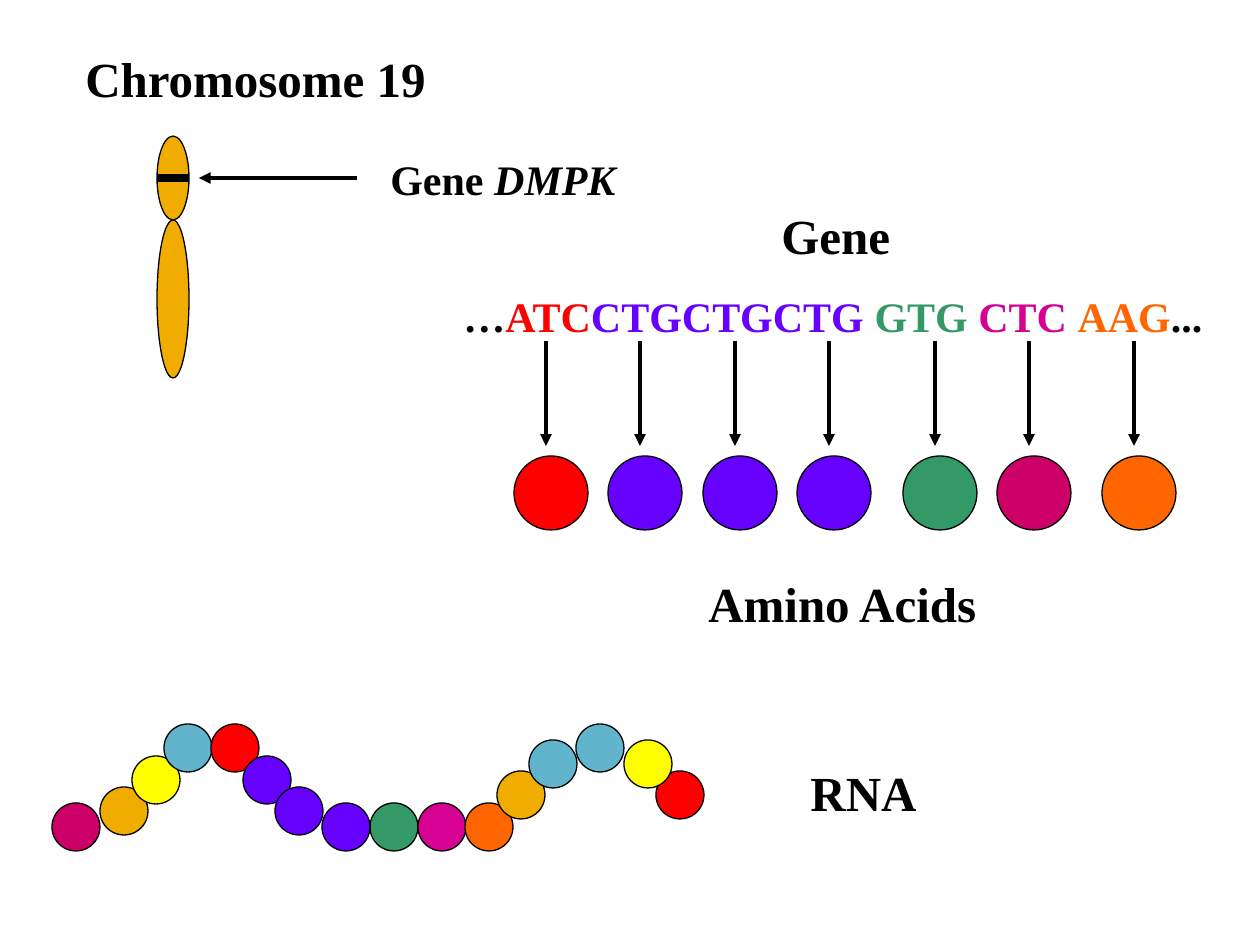
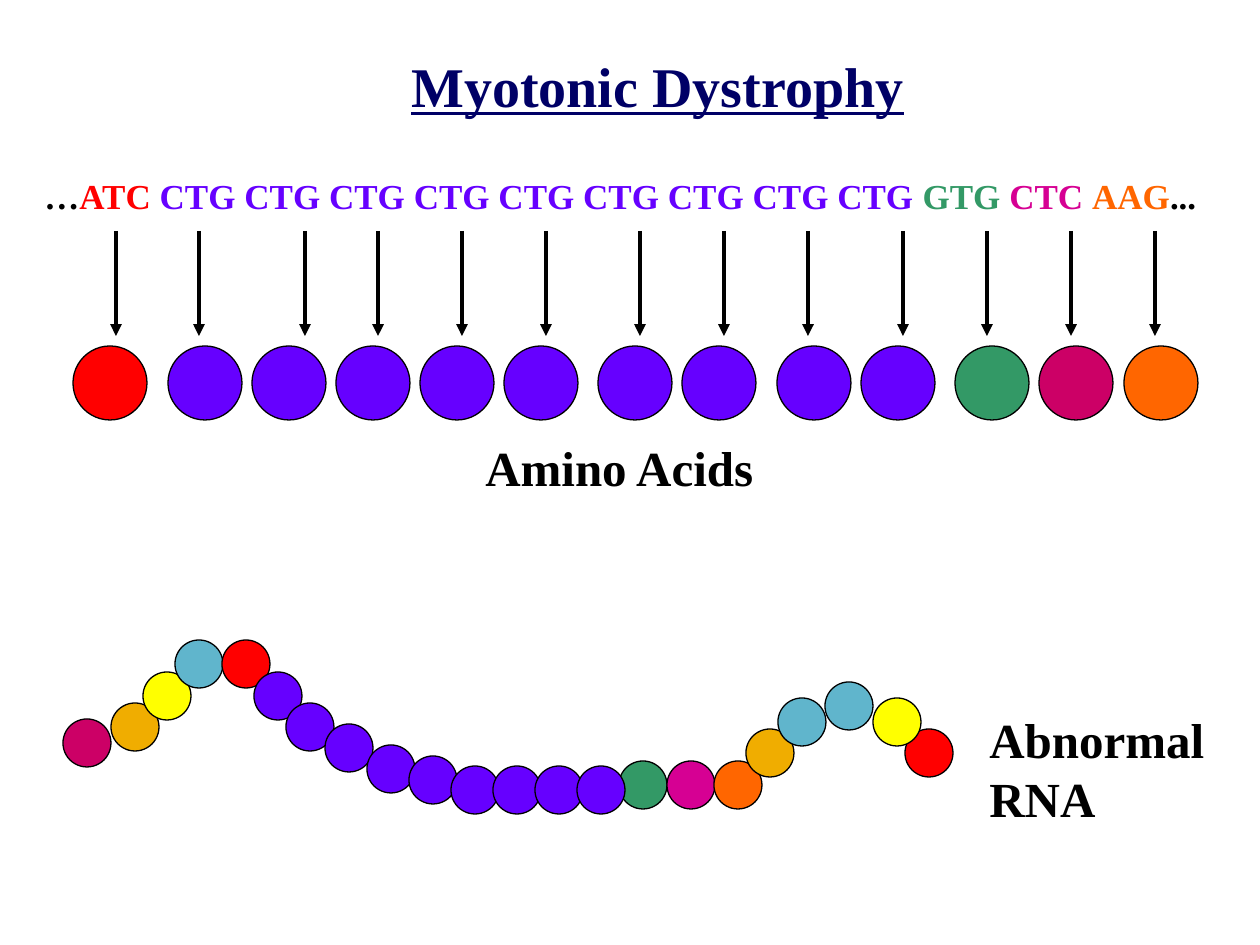
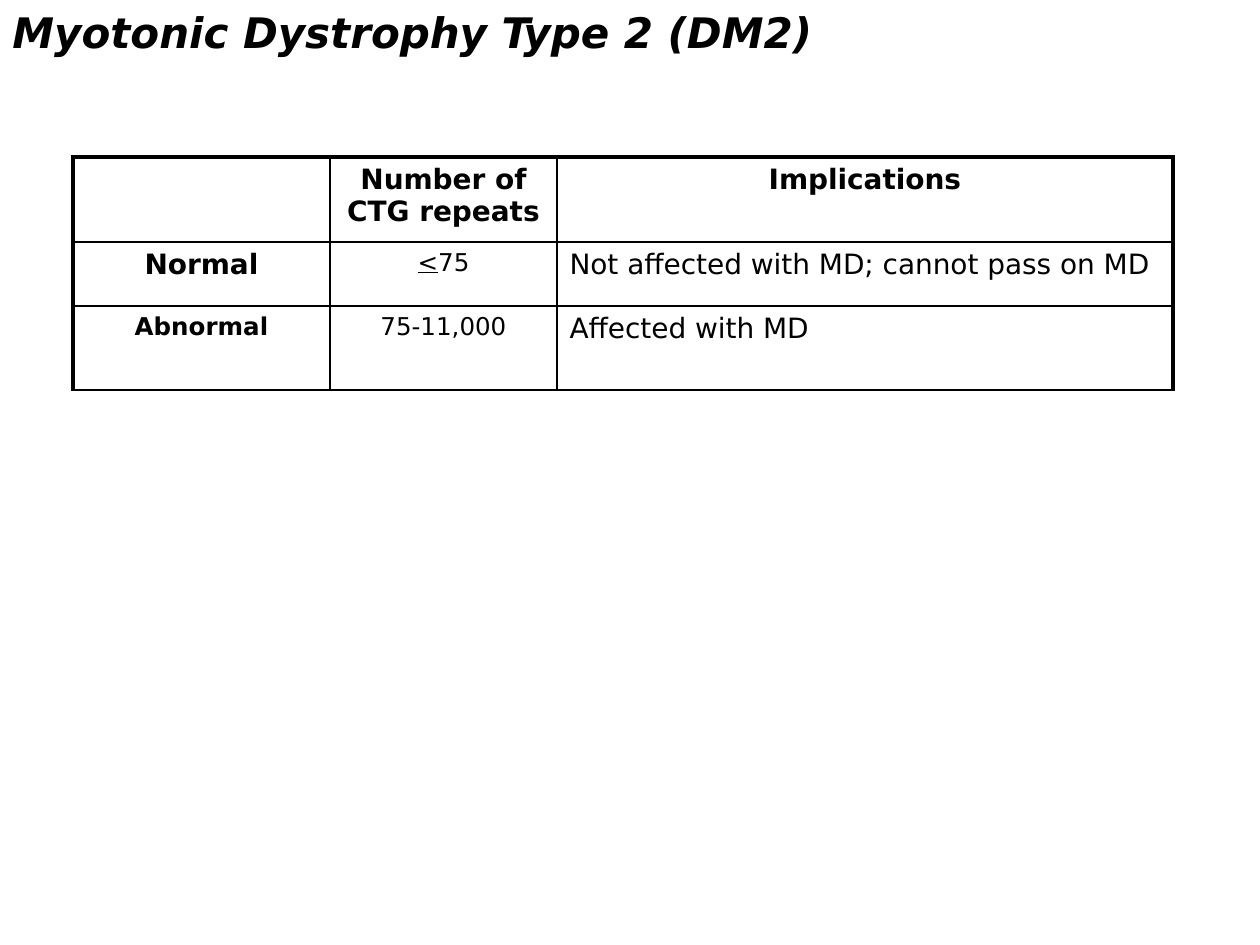
from lxml import etree
from pptx import Presentation
from pptx.dml.color import RGBColor
from pptx.enum import shapes, text
from pptx.oxml import ns
from pptx.util import Emu, Pt

EMU_PER_PX = 914400 / 126

BLACK = RGBColor(0x00, 0x00, 0x00)
WHITE = RGBColor(0xFF, 0xFF, 0xFF)
NAVY = RGBColor(0x00, 0x00, 0x66)
RED = RGBColor(0xFF, 0x00, 0x00)
VIOLET = RGBColor(0x66, 0x00, 0xFF)
GREEN = RGBColor(0x33, 0x99, 0x66)
CRIMSON = RGBColor(0xCC, 0x00, 0x66)
MAGENTA = RGBColor(0xD6, 0x00, 0x93)
ORANGE = RGBColor(0xFF, 0x66, 0x00)
GOLD = RGBColor(0xF0, 0xAD, 0x00)
YELLOW = RGBColor(0xFF, 0xFF, 0x00)
SKY = RGBColor(0x60, 0xB5, 0xCC)

SERIF = "Times New Roman"
SANS = "DejaVu Sans"

ACID_SIZE = 74
BEAD_SIZE = 48
# Bead centres relative to the first bead of each chain part
CHAIN_START = [(0, 0, CRIMSON), (48, -16, GOLD), (80, -47, YELLOW), (112, -79, SKY),
               (159, -79, RED), (191, -47, VIOLET), (223, -16, VIOLET)]
CHAIN_END = [(286, -32, RED), (0, 0, GREEN), (48, 0, MAGENTA), (95, 0, ORANGE),
             (127, -32, GOLD), (159, -63, SKY), (206, -79, SKY), (254, -63, YELLOW)]


def px(length):
    return Emu(round(length * EMU_PER_PX))


def style_font(font, size, name=SERIF, bold=True, color=BLACK):
    font.size, font.name, font.bold = Pt(size), name, bold
    font.color.rgb = color


def add_label(page, left, top, width, height, lines, size, **style):
    """Each line is a list of (text, font changes) pairs or a plain string."""
    box = page.shapes.add_textbox(px(left), px(top), px(width), px(height))
    frame = box.text_frame
    frame.word_wrap = False
    frame.auto_size = text.MSO_AUTO_SIZE.SHAPE_TO_FIT_TEXT
    for index, line in enumerate(lines):
        para = frame.paragraphs[0] if index == 0 else frame.add_paragraph()
        fill_paragraph(para, line, size, **style)
    return box


def fill_paragraph(para, line, size, **style):
    style_font(para.font, size, **style)
    for words, changes in [(line, {})] if isinstance(line, str) else line:
        span = para.add_run()
        span.text = words
        for key, value in changes.items():
            if key == "color":
                span.font.color.rgb = value
            else:
                setattr(span.font, key, value)


def add_oval(page, left, top, width, height, color):
    oval = page.shapes.add_shape(shapes.MSO_SHAPE.OVAL, px(left), px(top), px(width), px(height))
    oval.shadow.inherit = False
    oval.fill.solid()
    oval.fill.fore_color.rgb = color
    oval.line.color.rgb = BLACK
    oval.line.width = Pt(0.75)


def add_line(page, start, end, width=2.25, arrow=True):
    line = page.shapes.add_connector(shapes.MSO_CONNECTOR.STRAIGHT, *map(px, start + end))
    line.line.color.rgb = BLACK
    line.line.width = Pt(width)
    if arrow:
        etree.SubElement(line.line._get_or_add_ln(), ns.qn("a:tailEnd"), type="triangle")
    etree.SubElement(line._element.spPr, ns.qn("a:effectLst"))


def add_translation(page, top, arrows, acids, colors):
    """Arrows from the codons down to one amino acid each."""
    for arrow_x, acid_left, color in zip(arrows, acids, colors):
        add_line(page, (arrow_x, top), (arrow_x, top + 105))
        add_oval(page, acid_left, top + 115, ACID_SIZE, ACID_SIZE, color)


def add_chain(page, start, end, repeats):
    """RNA chain: fixed start and end parts with violet repeats between."""
    beads = [(start[0] + x, start[1] + y, color) for x, y, color in CHAIN_START]
    beads += [(end[0] + x, end[1] + y, color) for x, y, color in CHAIN_END]
    beads += [(x, y, VIOLET) for x, y in repeats]
    for x, y, color in beads:
        add_oval(page, x - BEAD_SIZE / 2, y - BEAD_SIZE / 2, BEAD_SIZE, BEAD_SIZE, color)


def codon_line(first, repeats):
    return [("…", {}), (first, {"color": RED}), (repeats, {"color": VIOLET}),
            ("GTG ", {"color": GREEN}), ("CTC ", {"color": MAGENTA}),
            ("AAG", {"color": ORANGE}), ("...", {})]


def set_borders(cell, widths):
    properties = cell._tc.get_or_add_tcPr()
    for side, width in zip("LRTB", widths):
        border = etree.SubElement(properties, ns.qn(f"a:ln{side}"), w=str(Pt(width)))
        fill = etree.SubElement(border, ns.qn("a:solidFill"))
        etree.SubElement(fill, ns.qn("a:srgbClr"), val=str(BLACK))


def add_grid(page, left, top, widths, heights, rows):
    """Each cell is (line, size, bold); thick rules on the left, top and right edges."""
    frame = page.shapes.add_table(len(rows), len(widths), px(left), px(top),
                                  px(sum(widths)), px(sum(heights)))
    table = frame.table
    table.first_row = table.horz_banding = False
    for column, width in zip(table.columns, widths):
        column.width = px(width)
    last = len(widths) - 1
    for r, (height, row) in enumerate(zip(heights, rows)):
        table.rows[r].height = px(height)
        for c, (line, size, bold) in enumerate(row):
            cell = table.cell(r, c)
            set_borders(cell, [2.25 if c == 0 else 1, 2.25 if c == last else 1,
                               2.25 if r == 0 else 1, 1])
            cell.fill.solid()
            cell.fill.fore_color.rgb = WHITE
            para = cell.text_frame.paragraphs[0]
            if r == 0 or c < last:
                para.alignment = text.PP_ALIGN.CENTER
            if line:
                fill_paragraph(para, line, size, name=SANS, bold=bold)


def build_gene_page(page):
    # Chromosome with the marked gene
    add_label(page, 73, 42, 367, 72, ["Chromosome 19"], 28)
    add_oval(page, 157, 136, 32, 84, GOLD)
    add_oval(page, 157, 220, 32, 158, GOLD)
    add_line(page, (157, 178), (189, 178), width=4.5, arrow=False)
    add_label(page, 378, 147, 251, 63, [[("Gene ", {}), ("DMPK", {"italic": True})]], 24)
    add_line(page, (357, 178), (199, 178))

    # Codons and amino acids
    add_label(page, 769, 199, 134, 72, ["Gene"], 28)
    add_label(page, 451, 284, 767, 63, [codon_line("ATC", "CTGCTGCTG ")], 24)
    arrows = [546, 640, 735, 829, 935, 1029, 1134]
    acids = [x - 32 for x in arrows]
    add_translation(page, 341, arrows, acids, [RED] + [VIOLET] * 3 + [GREEN, CRIMSON, ORANGE])
    add_label(page, 696, 567, 296, 72, ["Amino Acids"], 28)

    # RNA
    add_chain(page, (76, 827), (394, 827), [(346, 827)])
    add_label(page, 798, 756, 132, 72, ["RNA"], 28)


def build_repeat_page(page):
    add_label(page, 399, 45, 518, 79, [[("Myotonic Dystrophy", {"underline": True})]], 32, color=NAVY)

    # Codons and amino acids
    add_label(page, 32, 168, 1178, 54, [codon_line("ATC ", "CTG " * 9)], 20)
    arrows = [116, 199, 305, 378, 462, 546, 640, 724, 808, 903, 987, 1071, 1155]
    acids = [73, 168, 252, 336, 420, 504, 598, 682, 777, 861, 955, 1039, 1124]
    add_translation(page, 231, arrows, acids, [RED] + [VIOLET] * 9 + [GREEN, CRIMSON, ORANGE])
    add_label(page, 473, 431, 296, 72, ["Amino Acids"], 28)

    # Abnormal RNA
    repeats = [(349, 748), (391, 769), (433, 780)] + [(x, 790) for x in range(475, 602, 42)]
    add_chain(page, (87, 743), (643, 785), repeats)
    add_label(page, 977, 703, 241, 130, ["Abnormal", "RNA"], 28)


def build_type_two_page(page):
    add_grid(page, 73, 157, [257, 227, 616], [85, 64, 84], [
        [("", 16, True), ("Number of CTG repeats", 16, True), ("Implications", 16, True)],
        [("Normal", 16, True), ([("<", {"underline": True}), ("75", {})], 14, False),
         ("Not affected with MD; cannot pass on MD", 16, False)],
        [("Abnormal", 14, True), ("75-11,000", 14, False), ("Affected with MD", 16, False)],
    ])
    add_label(page, 0, 0, 839, 64, [[("Myotonic Dystrophy Type 2 (DM2)", {"italic": True})]], 24, name=SANS)


def main():
    deck = Presentation()
    deck.slide_width, deck.slide_height = px(1260), px(945)
    for build in (build_gene_page, build_repeat_page, build_type_two_page):
        build(deck.slides.add_slide(deck.slide_layouts[6]))
    deck.save("out.pptx")


if __name__ == "__main__":
    main()
